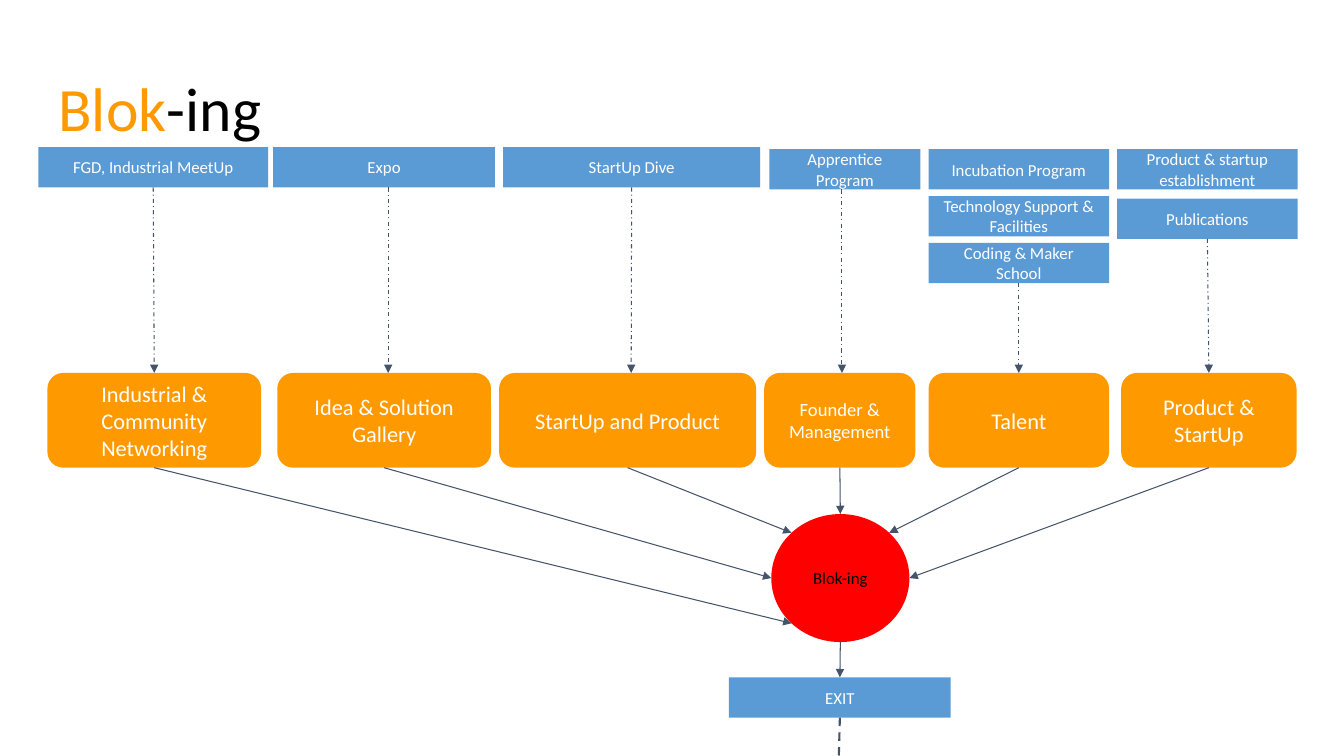
from dataclasses import dataclass
from math import cos, radians, sin
from typing import NamedTuple

from lxml.etree import SubElement
from pptx import Presentation
from pptx.dml.color import RGBColor
from pptx.enum.dml import MSO_LINE
from pptx.enum.shapes import MSO_CONNECTOR, MSO_SHAPE
from pptx.enum.text import MSO_ANCHOR, MSO_AUTO_SIZE, PP_ALIGN
from pptx.oxml.ns import qn
from pptx.util import Inches, Pt


@dataclass(frozen=True)
class Theme:
    """Colours, type sizes and line widths of the slide."""
    font: str = "Calibri"
    program: str = "5B9BD5"
    goal: str = "FF9900"
    hub: str = "FF0000"
    line: str = "44546A"
    light: str = "FFFFFF"
    dark: str = "000000"
    title_size: float = 44
    goal_size: float = 16
    narrow_size: float = 13.3
    small_size: float = 12
    inset: float = 0.13
    thin: float = 0.75
    thick: float = 1.5


class Box(NamedTuple):
    """A rectangle measured in inches."""
    left: float
    top: float
    width: float
    height: float

    @property
    def center(self):
        """Return the horizontal middle."""
        return self.left + self.width / 2

    @property
    def bottom(self):
        """Return the lower edge."""
        return self.top + self.height

    def rim(self, angle):
        """Return the point at an angle on the inscribed ellipse, clockwise from the right."""
        turn = radians(angle)
        return (self.center + self.width / 2 * cos(turn),
                self.top + self.height / 2 * (1 + sin(turn)))


class Column(NamedTuple):
    """Programs stacked above the goal that they feed."""
    programs: list
    stack: Box
    step: float
    goal: str
    goal_box: Box
    hub_angle: float
    arrow_x: float | None = None
    goal_size: float = Theme.goal_size


THEME = Theme()
TOP, BOTTOM = 0, 2
HUB_TOP = 270
GOAL_TOP, GOAL_HEIGHT = 3.7, 0.94
HUB_BOX = Box(7.65, 5.1, 1.37, 1.27)
EXIT_BOX = Box(7.23, 6.72, 2.2, 0.4)
COLUMNS = [
    Column(["FGD, Industrial MeetUp"], Box(0.38, 1.46, 2.28, 0.4), 0,
           "Industrial & Community Networking",
           Box(0.47, GOAL_TOP, 2.12, GOAL_HEIGHT), 135),
    Column(["Expo"], Box(2.71, 1.46, 2.2, 0.4), 0, "Idea & Solution Gallery",
           Box(2.75, GOAL_TOP, 2.12, GOAL_HEIGHT), 180, 3.85),
    Column(["StartUp Dive"], Box(4.99, 1.46, 2.55, 0.4), 0, "StartUp and Product",
           Box(4.95, GOAL_TOP, 2.55, GOAL_HEIGHT), 225, 6.26),
    Column(["Apprentice Program"], Box(7.63, 1.48, 1.5, 0.4), 0, "Founder & Management",
           Box(7.58, GOAL_TOP, 1.5, GOAL_HEIGHT), HUB_TOP, 8.35, THEME.narrow_size),
    Column(["Incubation Program", "Technology Support & Facilities",
            "Coding & Maker School"], Box(9.21, 1.48, 1.79, 0.4), 0.465, "Talent",
           Box(9.21, GOAL_TOP, 1.79, GOAL_HEIGHT), 315),
    Column(["Product & startup establishment", "Publications"],
           Box(11.08, 1.48, 1.79, 0.4), 0.49, "Product & StartUp",
           Box(11.12, GOAL_TOP, 1.74, GOAL_HEIGHT), 0),
]


def style_frame(frame, anchor):
    """Set the wrapping, insets and anchor of a text frame."""
    frame.word_wrap = True
    frame.auto_size = MSO_AUTO_SIZE.NONE
    frame.vertical_anchor = anchor
    frame.margin_left = frame.margin_right = Inches(THEME.inset)
    frame.margin_top = frame.margin_bottom = Inches(THEME.inset)


def style_span(span, size, color):
    """Set the font of one run."""
    span.font.name = THEME.font
    span.font.size = Pt(size)
    span.font.color.rgb = RGBColor.from_string(color)


def add_block(page, kind, box, text, fill, size=THEME.small_size, color=THEME.light):
    """Add a filled shape with centred text."""
    block = page.shapes.add_shape(kind, *map(Inches, box))
    block.shadow.inherit = False
    block.fill.solid()
    block.fill.fore_color.rgb = RGBColor.from_string(fill)
    block.line.fill.background()
    style_frame(block.text_frame, MSO_ANCHOR.MIDDLE)
    block.text_frame.text = text
    para = block.text_frame.paragraphs[0]
    para.alignment = PP_ALIGN.CENTER
    style_span(para.runs[0], size, color)
    return block


def add_line(page, start, end, dash=None, width=THEME.thin, arrow=True):
    """Add a straight line between two points, by default with an arrowhead."""
    line = page.shapes.add_connector(MSO_CONNECTOR.STRAIGHT, *map(Inches, (*start, *end)))
    line.line.color.rgb = RGBColor.from_string(THEME.line)
    line.line.width = Pt(width)
    if dash is not None:
        line.line.dash_style = dash
    properties = line._element.spPr
    if arrow:
        SubElement(properties.find(qn("a:ln")), qn("a:tailEnd"), type="triangle")
    SubElement(properties, qn("a:effectLst"))
    return line


def draw_title(page, box):
    """Place the two-colour title."""
    title = page.shapes.title
    title.left, title.top, title.width, title.height = map(Inches, box)
    style_frame(title.text_frame, MSO_ANCHOR.TOP)
    para = title.text_frame.paragraphs[0]
    para.alignment = PP_ALIGN.LEFT
    para.line_spacing = 0.9
    for text, color in (("Blok", THEME.goal), ("-ing", THEME.dark)):
        span = para.add_run()
        span.text = text
        style_span(span, THEME.title_size, color)


def draw_column(page, column):
    """Stack the programs, place their goal and return the goal's shape."""
    stack, goal_box = column.stack, column.goal_box
    for row, text in enumerate(column.programs):
        program_box = stack._replace(top=stack.top + row * column.step)
        program = add_block(page, MSO_SHAPE.RECTANGLE, program_box, text, THEME.program)
    goal = add_block(page, MSO_SHAPE.ROUNDED_RECTANGLE, goal_box, column.goal,
                     THEME.goal, column.goal_size)
    start_x = column.arrow_x or stack.center
    end_x = column.arrow_x or goal_box.center
    line = add_line(page, (start_x, program_box.bottom), (end_x, goal_box.top),
                    MSO_LINE.DASH_DOT)
    if abs(start_x - stack.center) < 0.01:
        line.begin_connect(program, BOTTOM)
    if abs(end_x - goal_box.center) < 0.01:
        line.end_connect(goal, TOP)
    return goal


def draw_hub(page, box, goals):
    """Place the hub and point every goal at its rim."""
    hub = add_block(page, MSO_SHAPE.FLOWCHART_CONNECTOR, box, "Blok-ing", THEME.hub,
                    color=THEME.dark)
    for column, goal in zip(COLUMNS, goals):
        start = (column.goal_box.center, column.goal_box.bottom)
        line = add_line(page, start, box.rim(column.hub_angle))
        line.begin_connect(goal, BOTTOM)
        if column.hub_angle == HUB_TOP:
            line.end_connect(hub, TOP)


def draw_exit(page, box, hub_box, page_bottom):
    """Place the exit below the hub, with a dashed line leaving the page."""
    block = add_block(page, MSO_SHAPE.RECTANGLE, box, "EXIT", THEME.program)
    arrow = add_line(page, hub_box.rim(90), (box.center, box.top))
    arrow.end_connect(block, TOP)
    tail = add_line(page, (box.center, box.bottom), (box.center - 0.01, page_bottom),
                    MSO_LINE.DASH, THEME.thick, arrow=False)
    tail.begin_connect(block, BOTTOM)


def main():
    """Build the deck and save it."""
    deck = Presentation()
    deck.slide_width, deck.slide_height = Inches(13.33), Inches(7.5)
    page = deck.slides.add_slide(deck.slide_layouts[5])
    draw_title(page, Box(0.45, 0.65, 12.42, 0.84))
    goals = [draw_column(page, column) for column in COLUMNS]
    draw_hub(page, HUB_BOX, goals)
    draw_exit(page, EXIT_BOX, HUB_BOX, 7.5)
    deck.save("out.pptx")


if __name__ == "__main__":
    main()
